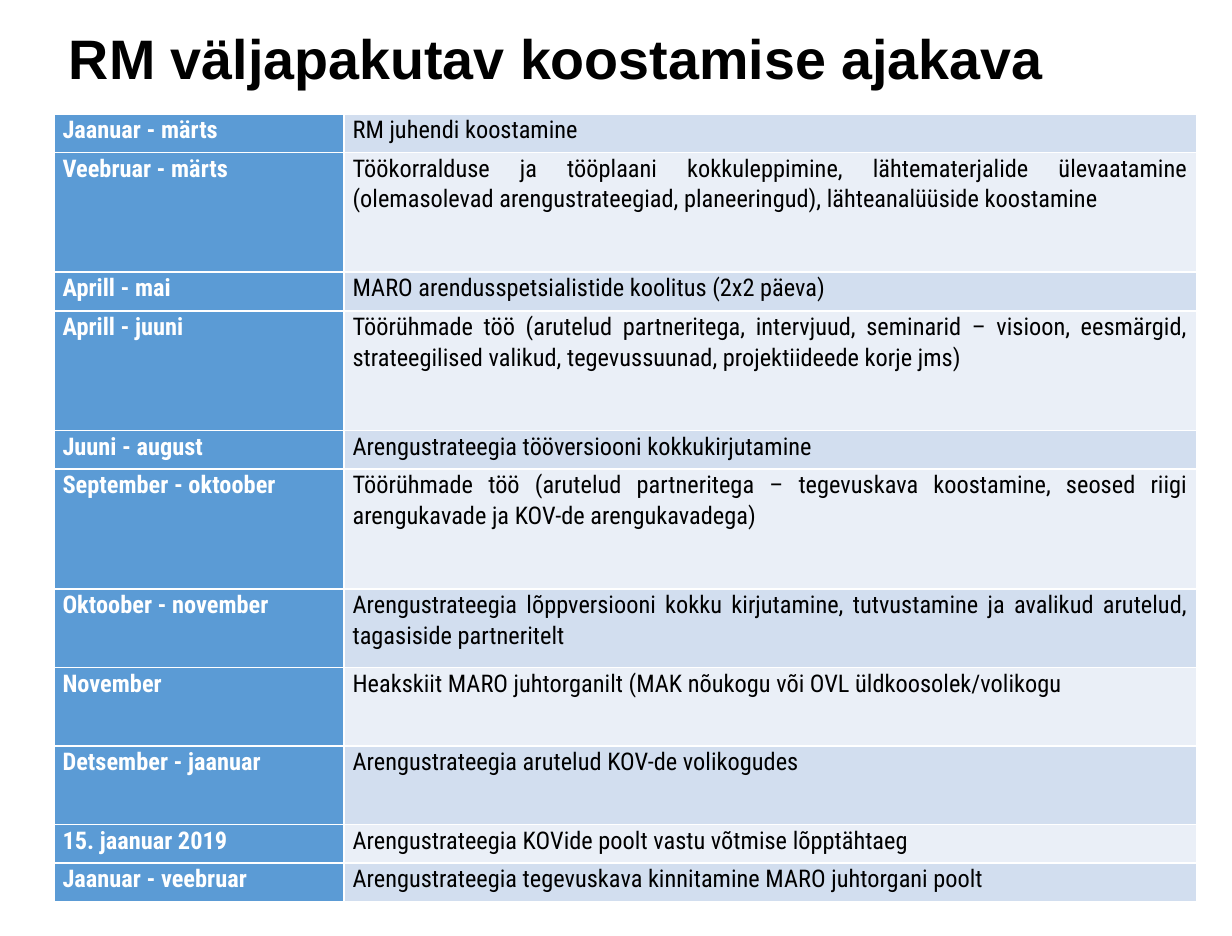
from lxml.etree import SubElement
from pptx import Presentation
from pptx.dml.color import RGBColor
from pptx.enum.text import MSO_ANCHOR, MSO_AUTO_SIZE, PP_ALIGN
from pptx.oxml.ns import qn
from pptx.util import Inches, Pt

WHITE = RGBColor(0xFF, 0xFF, 0xFF)
BLACK = RGBColor(0, 0, 0)
BLUE = RGBColor(0x5B, 0x9B, 0xD5)
BAND_DARK = RGBColor(0xD2, 0xDE, 0xEF)
BAND_LIGHT = RGBColor(0xEA, 0xEF, 0xF7)

CM_PER_INCH = 2.54
TITLE = "RM väljapakutav koostamise ajakava"
COLUMN_WIDTHS = (2.32, 6.82)
# Row heights in inches, by the number of lines reserved
SHORT, MEDIUM, TALL = 0.31, 0.63, 0.96
SCHEDULE = [
    ("Jaanuar - märts", "RM juhendi koostamine", SHORT),
    ("Veebruar - märts",
     "Töökorralduse ja tööplaani kokkuleppimine, lähtematerjalide ülevaatamine "
     "(olemasolevad arengustrateegiad, planeeringud), lähteanalüüside koostamine", TALL),
    ("Aprill - mai", "MARO arendusspetsialistide koolitus (2x2 päeva)", SHORT),
    ("Aprill - juuni",
     "Töörühmade töö (arutelud partneritega, intervjuud, seminarid – visioon, eesmärgid, "
     "strateegilised valikud, tegevussuunad, projektiideede korje jms)", TALL),
    ("Juuni - august", "Arengustrateegia tööversiooni kokkukirjutamine", SHORT),
    ("September - oktoober",
     "Töörühmade töö (arutelud partneritega – tegevuskava koostamine, seosed riigi "
     "arengukavade ja KOV-de arengukavadega)", TALL),
    ("Oktoober - november",
     "Arengustrateegia lõppversiooni kokku kirjutamine, tutvustamine ja avalikud arutelud, "
     "tagasiside partneritelt", MEDIUM),
    ("November",
     "Heakskiit MARO juhtorganilt (MAK nõukogu või OVL üldkoosolek/volikogu", MEDIUM),
    ("Detsember - jaanuar", "Arengustrateegia arutelud KOV-de volikogudes", MEDIUM),
    ("15. jaanuar 2019", "Arengustrateegia KOVide poolt vastu võtmise lõpptähtaeg", SHORT),
    ("Jaanuar - veebruar",
     "Arengustrateegia tegevuskava kinnitamine MARO juhtorgani poolt", SHORT),
]


def write_text(tf, text, *, font, size, color, bold, align, spacing):
    p = tf.paragraphs[0]
    p.alignment = align
    p.line_spacing = spacing
    r = p.add_run()
    r.text = text
    r.font.name = font
    r.font.size = Pt(size)
    r.font.bold = bold
    r.font.color.rgb = color


def set_margins(frame, side, top):
    frame.margin_left = frame.margin_right = Inches(side)
    frame.margin_top = Inches(top)
    frame.margin_bottom = 0


def set_borders(cell, color, width):
    tc_pr = cell._tc.get_or_add_tcPr()
    for i, side in enumerate(("a:lnL", "a:lnR", "a:lnT", "a:lnB")):
        # Borders come before the fill in the cell properties
        ln = SubElement(tc_pr, qn(side), w=str(Pt(width)))
        tc_pr.insert(i, ln)
        fill = SubElement(ln, qn("a:solidFill"))
        SubElement(fill, qn("a:srgbClr"), val=str(color))


def add_title(slide, left, top, width, height):
    sp = slide.shapes.title
    sp.left, sp.top, sp.width, sp.height = map(Inches, (left, top, width, height))
    tf = sp.text_frame
    tf.word_wrap = True
    tf.auto_size = MSO_AUTO_SIZE.NONE
    tf.vertical_anchor = MSO_ANCHOR.TOP
    set_margins(tf, 0, 0.06)
    write_text(tf, TITLE, font="Arial", size=32, color=BLACK, bold=True,
               align=PP_ALIGN.LEFT, spacing=0.88)


def add_schedule(slide, left, top, width, height):
    sp = slide.shapes.add_table(len(SCHEDULE), len(COLUMN_WIDTHS),
                                *map(Inches, (left, top, width, height)))
    table = sp.table
    for column, share in zip(table.columns, COLUMN_WIDTHS):
        column.width = Inches(width * share / sum(COLUMN_WIDTHS))
    total = sum(row[-1] for row in SCHEDULE)
    for i, (period, task, row_height) in enumerate(SCHEDULE):
        table.rows[i].height = Inches(height * row_height / total)
        band = BAND_LIGHT if i % 2 else BAND_DARK
        # Period in white on blue, task in black on the band colour
        styles = ((period, BLUE, WHITE, True), (task, band, BLACK, False))
        for j, (text, fill, color, bold) in enumerate(styles):
            cell = table.cell(i, j)
            cell.fill.solid()
            cell.fill.fore_color.rgb = fill
            cell.vertical_anchor = MSO_ANCHOR.TOP
            set_margins(cell, 0.07, 0)
            set_borders(cell, WHITE, 1)
            write_text(cell.text_frame, text, font="Roboto Condensed", size=14,
                       color=color, bold=bold, align=PP_ALIGN.JUSTIFY, spacing=1.07)


def main():
    prs = Presentation()
    # The page is 25 by 19 cm
    prs.slide_width = Inches(25 / CM_PER_INCH)
    prs.slide_height = Inches(19 / CM_PER_INCH)
    slide = prs.slides.add_slide(prs.slide_layouts[5])
    add_title(slide, 0.55, 0.2, 8.82, 0.79)
    add_schedule(slide, 0.43, 0.91, 9.13, 6.3)
    prs.save("out.pptx")


if __name__ == "__main__":
    main()
